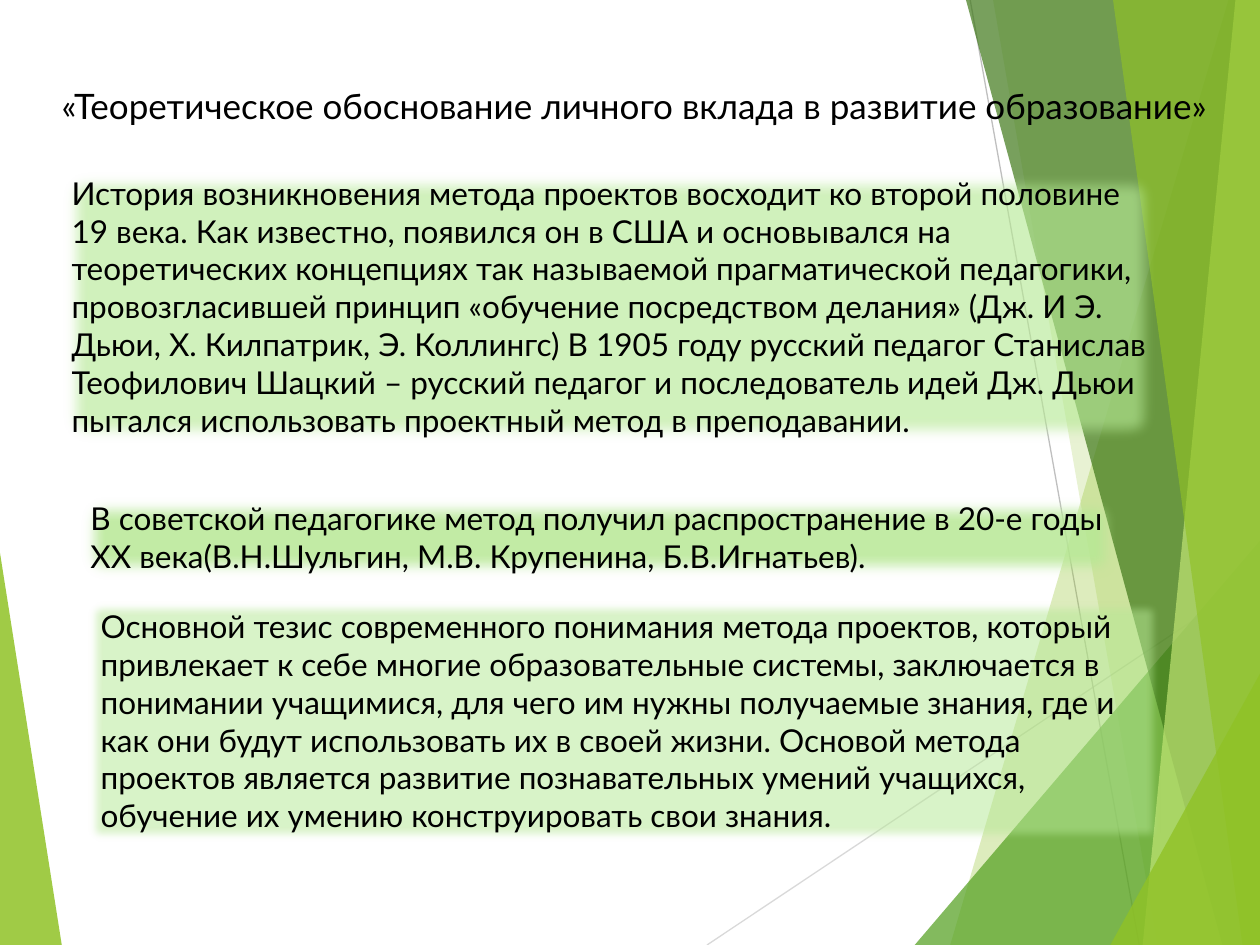
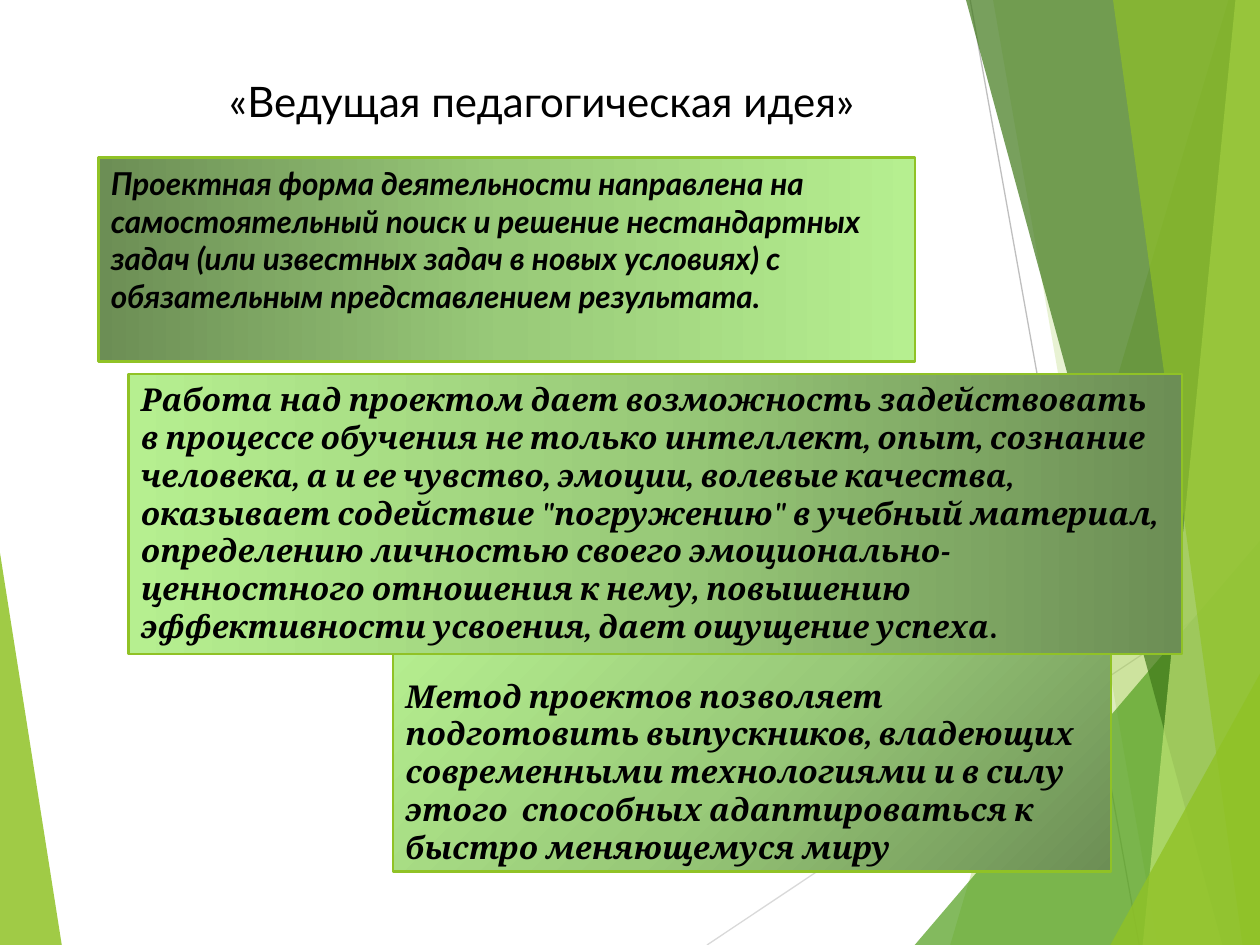
from lxml import etree
from pptx import Presentation
from pptx.dml.color import RGBColor
from pptx.enum import shapes, text
from pptx.oxml.ns import qn
from pptx.util import Pt

WIDTH, HEIGHT = 720, 540
LIME, GREEN, FOREST, PALE = "90C226", "54A021", "3F7819", "C0E474"
MINT, BLACK = "B7E996", "000000"
GRADIENT = [(0, "6C8E55"), (50, "99CA79"), (100, "B6EF90")]
SANS, SERIF = "Lato", "Cambria"

# Polygons reaching the right edge: top x, bottom x, colour, opacity in percent
BANDS = [(702, 543, LIME, 30), (567.5, 661.5, LIME, 20)]
FRONT_BANDS = [(552, 698.5, FOREST, 70), (706, 653, PALE, 70), (636, 710, LIME, 65)]


def rgb(value):
    return RGBColor.from_string(value)


def add_xml(parent, tag, **attributes):
    return etree.SubElement(parent, qn(tag), {k: str(v) for k, v in attributes.items()})


class Slides:
    def __init__(self):
        self.deck = Presentation()
        self.deck.slide_width, self.deck.slide_height = Pt(WIDTH), Pt(HEIGHT)
        self.layout = self.deck.slide_layouts[5]
        self.page = None

    def add_page(self, title, left, top, width, size):
        self.page = self.deck.slides.add_slide(self.layout)
        box = self.page.shapes.title
        box.left, box.top, box.width, box.height = Pt(left), Pt(top), Pt(width), Pt(36)
        self.set_text(box, [(title, {})], size=size, wrap=False)

    def set_text(self, box, spans, font=SANS, size=18, wrap=True,
                 anchor=text.MSO_ANCHOR.TOP, bold=False, italic=False):
        """Fill the box with one left-aligned paragraph of (words, overrides) spans."""
        frame = box.text_frame
        frame.word_wrap = wrap
        frame.auto_size = text.MSO_AUTO_SIZE.NONE
        frame.vertical_anchor = anchor
        para = frame.paragraphs[0]
        para.alignment = text.PP_ALIGN.LEFT
        for words, overrides in spans:
            span = para.add_run()
            span.text = words
            span.font.name, span.font.size = font, Pt(size)
            span.font.bold = bold
            span.font.italic = overrides.get("italic", italic)
            span.font.color.rgb = rgb(BLACK)

    def paint(self, shape, color, opacity):
        shape.fill.solid()
        shape.fill.fore_color.rgb = rgb(color)
        tone = shape.element.spPr.find(qn("a:solidFill"))[0]
        add_xml(tone, "a:alpha", val=opacity * 1000)

    def panel(self, left, top, width, height):
        box = self.page.shapes.add_shape(shapes.MSO_SHAPE.RECTANGLE,
                                         Pt(left), Pt(top), Pt(width), Pt(height))
        box.shadow.inherit = False
        box.line.color.rgb = rgb(LIME)
        box.line.width = Pt(1.5)
        return box

    def soft_panel(self, place, words, opacity, edge):
        """Translucent panel whose border fades out over the given edge."""
        box = self.panel(*place)
        self.paint(box, MINT, opacity)
        add_xml(box.element.spPr.find(qn("a:effectLst")), "a:softEdge", rad=Pt(edge))
        self.set_text(box, [(words, {})])

    def gradient_panel(self, place, spans, angle, **style):
        box = self.panel(*place)
        box.fill.gradient()
        fill = box.element.spPr.find(qn("a:gradFill"))
        for child in list(fill):
            fill.remove(child)
        stops = add_xml(fill, "a:gsLst")
        for position, color in GRADIENT:
            stop = add_xml(stops, "a:gs", pos=position * 1000)
            add_xml(stop, "a:srgbClr", val=color)
        add_xml(fill, "a:lin", ang=angle * 60000, scaled=0)
        self.set_text(box, spans, bold=True, italic=True, **style)

    def polygon(self, points, color, opacity):
        corners = [(Pt(x), Pt(y)) for x, y in points]
        builder = self.page.shapes.build_freeform(*corners[0])
        builder.add_line_segments(corners[1:])
        shape = builder.convert_to_shape()
        shape.shadow.inherit = False
        self.paint(shape, color, opacity)
        shape.line.fill.background()

    def band(self, top_x, bottom_x, color, opacity):
        self.polygon([(top_x, 0), (bottom_x, HEIGHT), (WIDTH, HEIGHT), (WIDTH, 0)],
                     color, opacity)

    def corner(self, left, top, color, opacity):
        """Triangle in the bottom right corner."""
        self.polygon([(left, HEIGHT), (WIDTH, top), (WIDTH, HEIGHT)], color, opacity)

    def line(self, x1, y1, x2, y2, color):
        line = self.page.shapes.add_connector(shapes.MSO_CONNECTOR.STRAIGHT,
                                              Pt(x1), Pt(y1), Pt(x2), Pt(y2))
        line.line.color.rgb = rgb(color)
        line.line.width = Pt(0.75)
        add_xml(line.element.spPr, "a:effectLst")

    def share_scenery(self):
        """Draw the facets on the current page, then move them to the layout."""
        self.polygon([(0, 316), (35.3, HEIGHT), (0, HEIGHT)], LIME, 85)
        self.line(404, HEIGHT, WIDTH, 329, "D9D9D9")
        self.line(554.4, 0, 651, HEIGHT, "BFBFBF")
        for band in BANDS:
            self.band(*band)
        self.corner(522.7, 309, GREEN, 72)
        for band in FRONT_BANDS:
            self.band(*band)
        self.corner(634.5, 385, LIME, 80)
        facets = [shape for shape in self.page.shapes if not shape.is_placeholder]
        for number, facet in enumerate(facets, 100):
            facet.element.xpath(".//p:cNvPr")[0].set("id", str(number))
            self.layout.shapes.element.append(facet.element)


def main():
    slides = Slides()

    slides.add_page("«Теоретическое обоснование личного вклада в развитие образование»",
                    28, 44.6, 690, 20)
    slides.share_scenery()
    slides.soft_panel(
        (33.8, 95.8, 630, 160),
        "История возникновения метода проектов восходит ко второй половине 19 века. "
        "Как известно, появился он в США и основывался на теоретических концепциях "
        "так называемой прагматической педагогики, провозгласившей принцип «обучение "
        "посредством делания» (Дж. И Э. Дьюи, Х. Килпатрик, Э. Коллингс) В 1905 году "
        "русский педагог Станислав Теофилович Шацкий – русский педагог и последователь "
        "идей Дж. Дьюи пытался использовать проектный метод в преподавании.",
        63, 8.86)
    slides.soft_panel(
        (50.4, 343.4, 613.4, 138.2),
        "Основной тезис современного понимания метода проектов, который привлекает "
        "к себе многие образовательные системы, заключается в понимании учащимися, "
        "для чего им нужны получаемые знания, где и как они будут использовать их "
        "в своей жизни. Основой метода проектов является развитие познавательных "
        "умений учащихся, обучение их умению конструировать свои знания.",
        52, 5)
    slides.soft_panel(
        (44.6, 281.5, 596, 51),
        "В советской педагогике метод получил распространение в 20-е годы "
        "XX века(В.Н.Шульгин, М.В. Крупенина, Б.В.Игнатьев).",
        84, 8.86)

    slides.add_page("«Ведущая педагогическая идея»", 123.8, 39.6, 394, 24)
    slides.gradient_panel(
        (56.2, 90, 466.6, 116.6),
        [("Проектная форма деятельности направлена на самостоятельный поиск и решение "
          "нестандартных задач (или известных задач в новых условиях) с обязательным "
          "представлением результата.", {})],
        0)
    slides.gradient_panel(
        (224.6, 360, 410.4, 138.2),
        [("Метод проектов позволяет подготовить выпускников, владеющих современными "
          "технологиями и в силу этого  способных адаптироваться к быстро "
          "меняющемуся миру", {})],
        225, font=SERIF, anchor=text.MSO_ANCHOR.BOTTOM)
    slides.gradient_panel(
        (73.4, 213.8, 602, 160),
        [("Работа над проектом дает возможность задействовать в процессе обучения не "
          "только интеллект, опыт, сознание человека, а и ее чувство, эмоции, волевые "
          "качества, оказывает содействие \"погружению\" в учебный материал, определению "
          "личностью своего эмоционально-ценностного отношения к нему, повышению "
          "эффективности усвоения, дает ощущение успеха", {}),
         (".", {"italic": False})],
        180, font=SERIF)

    slides.deck.save("out.pptx")


if __name__ == "__main__":
    main()
